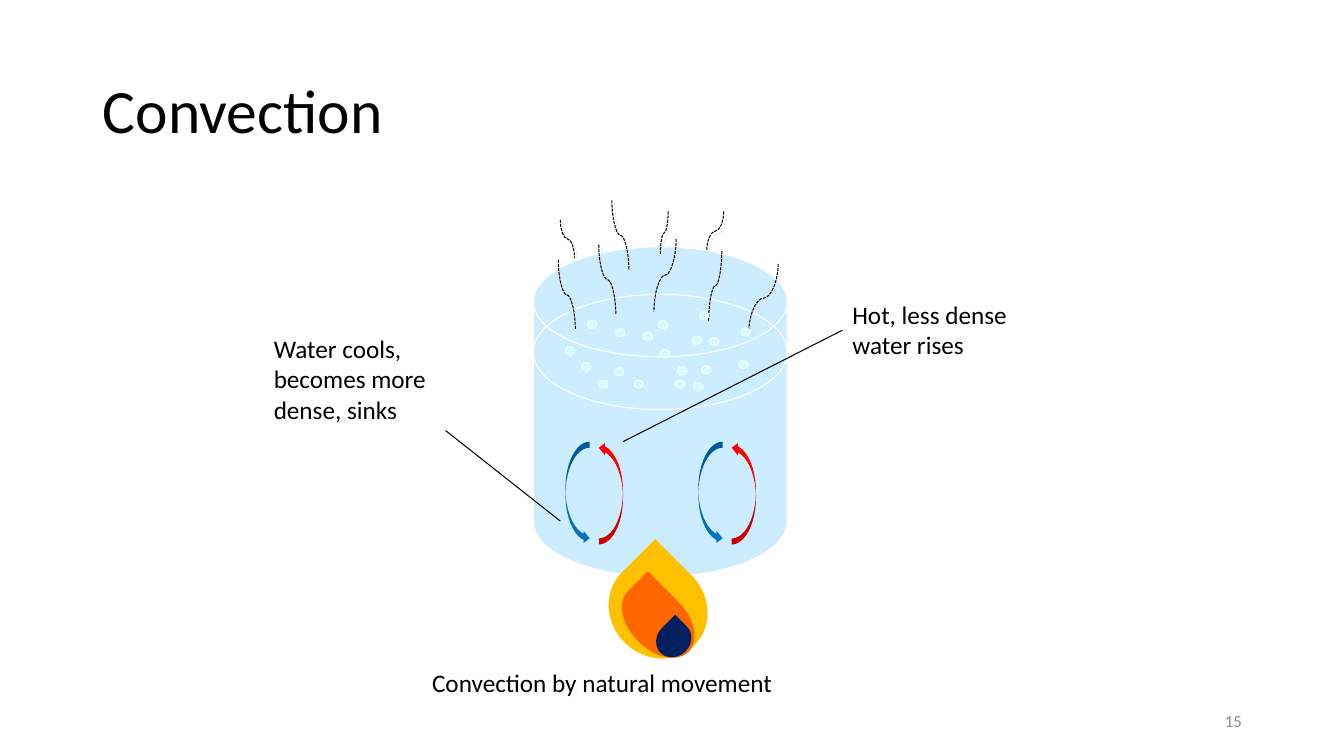
from pptx import Presentation
from pptx.dml.color import RGBColor
from pptx.enum.dml import MSO_LINE
from pptx.enum.shapes import MSO_CONNECTOR, MSO_SHAPE
from pptx.enum.text import MSO_ANCHOR, PP_ALIGN
from pptx.oxml.ns import qn
from pptx.util import Cm, Pt
from lxml.etree import SubElement

COLORS = {
    "text": "000000", "number": "898989", "white": "FFFFFF", "steam_shadow": "E7E6E6",
    "water": "CCECFF", "bubble": "CCFFFF", "cool": "0070C0", "hot": "FF0000",
    "flame": "FFC000", "flame_inner": "FF6600", "flame_core": "002060",
}

FLAMES = [
    ("flame", 15.39, 14.05, 2.39, 2.59),
    ("flame_inner", 15.88, 14.58, 1.42, 2.16),
    ("flame_core", 16.51, 15.7, 0.94, 0.84),
]

STEAM = [
    (15.09, 6.17, 15.52, 7.92), (17.04, 6.02, 16.48, 7.85), (18.19, 6.32, 17.86, 8.08),
    (14.07, 6.55, 14.5, 8.31), (19.61, 6.65, 18.87, 8.38), (15.42, 5.05, 15.85, 6.81),
    (18.24, 5.33, 17.81, 6.32), (16.84, 5.33, 16.64, 6.4), (14.12, 5.54, 14.48, 6.5),
]

BUBBLES = [
    (14.25, 8.74), (14.66, 9.14), (15.09, 9.58), (15.52, 8.28), (14.81, 8.08),
    (16.59, 8.08), (17.63, 7.85), (18.67, 8.26), (16.21, 8.38), (18.62, 9.09),
    (16.64, 8.81), (17.07, 9.25), (17.88, 8.51), (17.68, 9.22), (15.98, 9.58),
    (15.49, 9.27), (17.02, 9.58), (17.48, 9.65), (17.45, 8.48),
]


class ConvectionSlide:
    """Draws styled elements on one slide, with lengths in centimetres."""

    font = "Calibri"
    line_width = Pt(0.75)

    def __init__(self, deck):
        self.slide = deck.slides.add_slide(deck.slide_layouts[5])
        self.shapes = self.slide.shapes

    def color(self, name):
        return RGBColor.from_string(COLORS[name])

    def set_wording(self, holder, wording, size, color, align, anchor):
        frame = holder.text_frame
        frame.text = wording
        frame.word_wrap = True
        frame.vertical_anchor = anchor
        for paragraph in frame.paragraphs:
            paragraph.alignment = align
            for run in paragraph.runs:
                run.font.name = self.font
                run.font.size = Pt(size)
                run.font.color.rgb = self.color(color)

    def title(self, wording, left, top, width, height):
        heading = self.shapes.title
        heading.left, heading.top = Cm(left), Cm(top)
        heading.width, heading.height = Cm(width), Cm(height)
        self.set_wording(heading, wording, 44, "text", PP_ALIGN.LEFT, MSO_ANCHOR.MIDDLE)
        heading.text_frame.paragraphs[0].line_spacing = 0.9

    def label(self, wording, left, top, width, height, size=18, color="text",
              align=PP_ALIGN.LEFT, anchor=MSO_ANCHOR.TOP):
        box = self.shapes.add_textbox(Cm(left), Cm(top), Cm(width), Cm(height))
        self.set_wording(box, wording, size, color, align, anchor)
        return box

    def shape(self, preset, left, top, width, height, fill=None, outline=None, rotation=0):
        figure = self.shapes.add_shape(preset, Cm(left), Cm(top), Cm(width), Cm(height))
        figure.shadow.inherit = False
        figure.rotation = rotation
        if fill:
            figure.fill.solid()
            figure.fill.fore_color.rgb = self.color(fill)
        else:
            figure.fill.background()
        if outline:
            figure.line.color.rgb = self.color(outline)
            figure.line.width = self.line_width
        else:
            figure.line.fill.background()

    def connector(self, kind, x1, y1, x2, y2):
        link = self.shapes.add_connector(kind, Cm(x1), Cm(y1), Cm(x2), Cm(y2))
        link.line.color.rgb = self.color("text")
        link.line.width = self.line_width
        return link, SubElement(link._element.spPr, qn("a:effectLst"))

    def pointer(self, x1, y1, x2, y2):
        return self.connector(MSO_CONNECTOR.STRAIGHT, x1, y1, x2, y2)[0]

    def steam(self, x1, y1, x2, y2):
        """Draw a dashed curve that leaves and arrives vertically."""
        middle_x, middle_y = (x1 + x2) / 2, (y1 + y2) / 2
        half_drift, half_rise = abs(x2 - x1) / 2, (y2 - y1) / 2
        side = 1 if x2 > x1 else -1
        wisp, effects = self.connector(
            MSO_CONNECTOR.CURVE,
            middle_x + side * half_rise, middle_y - half_drift,
            middle_x - side * half_rise, middle_y + half_drift)
        turn = 270 if side > 0 else 90
        wisp._element.spPr.find(qn("a:xfrm")).set("rot", str(turn * 60000))
        wisp.line.dash_style = MSO_LINE.SQUARE_DOT
        shadow = SubElement(effects, qn("a:outerShdw"), dist=str(Pt(2.8)),
                            dir="2700000", algn="ctr", rotWithShape="0")
        SubElement(shadow, qn("a:srgbClr"), val=COLORS["steam_shadow"])


def main():
    deck = Presentation()
    deck.slide_width, deck.slide_height = Cm(33.87), Cm(19.05)
    page = ConvectionSlide(deck)
    page.title("Convection", 2.34, 1.02, 29.21, 3.68)

    page.shape(MSO_SHAPE.FLOWCHART_MAGNETIC_DISK, 13.44, 6.22, 6.4, 8.31, "water", "white")
    for cell_left in (14.25, 17.6):
        for offset, current, rotation in ((0, "cool", 0), (0.84, "hot", 180)):
            page.shape(MSO_SHAPE.CURVED_RIGHT_ARROW, cell_left + offset, 11.13, 0.61, 2.59,
                       current, rotation=rotation)
    page.shape(MSO_SHAPE.OVAL, 13.44, 7.42, 6.4, 2.9, outline="white")
    for fill, *bounds in FLAMES:
        page.shape(MSO_SHAPE.TEAR, *bounds, fill, rotation=-45)
    for wisp in STEAM:
        page.steam(*wisp)
    for left, top in BUBBLES:
        page.shape(MSO_SHAPE.OVAL, left, top, 0.23, 0.2, "bubble", "white")

    page.label("Convection by natural movement", 10.64, 16.69, 11.23, 1.02)
    rising = page.label("Hot, less dense\nwater rises", 21.23, 7.42, 5.46, 1.8)
    page.label("Water cools, becomes more dense, sinks", 6.65, 8.28, 5.61, 2.57)
    page.pointer(11.23, 10.85, 14.12, 13.13)
    page.pointer(21.23, 8.32, 15.7, 11.13).begin_connect(rising, 1)
    page.label("15", 23.93, 17.65, 7.62, 1.02, 12, "number", PP_ALIGN.RIGHT, MSO_ANCHOR.MIDDLE)
    deck.save("out.pptx")


if __name__ == "__main__":
    main()
